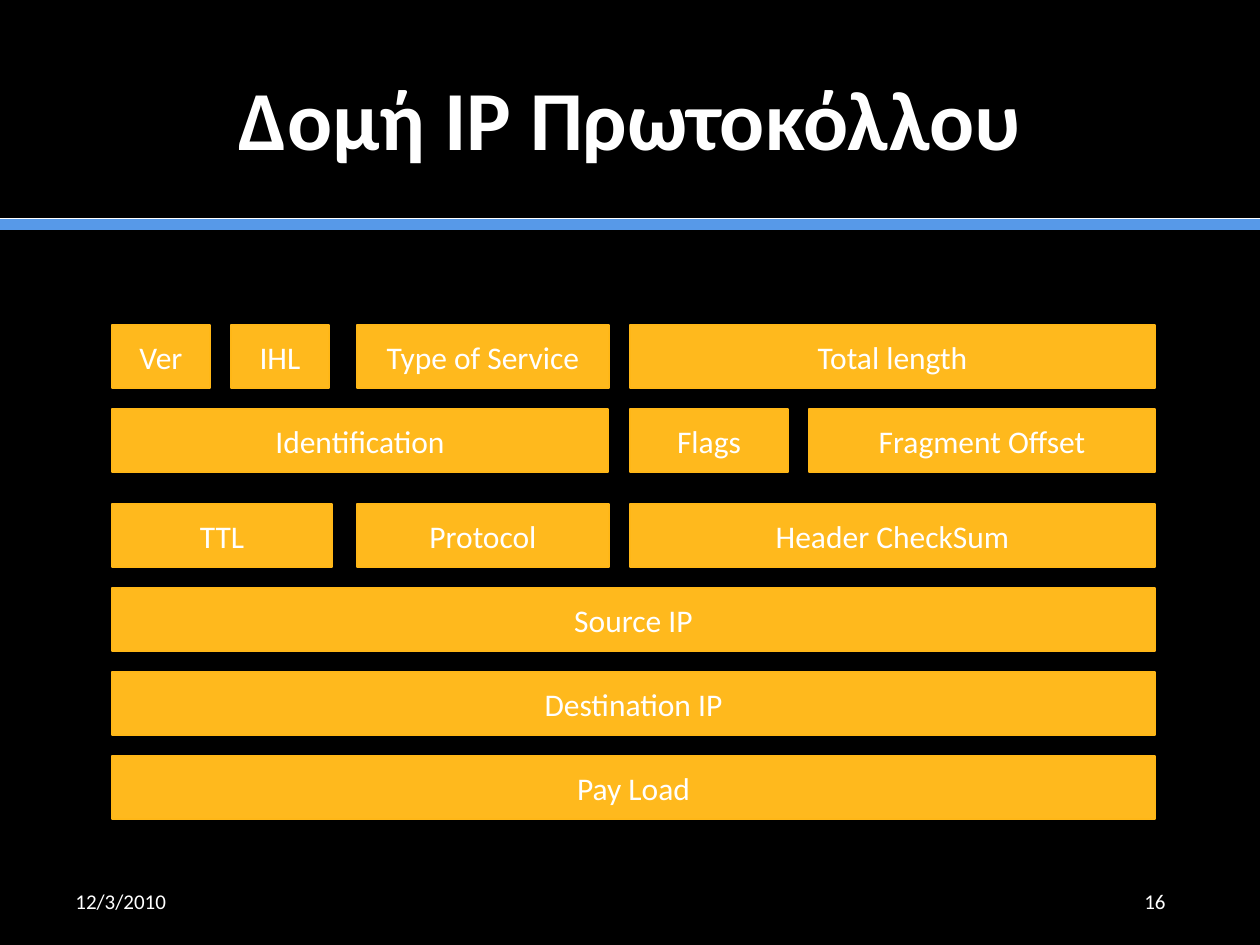
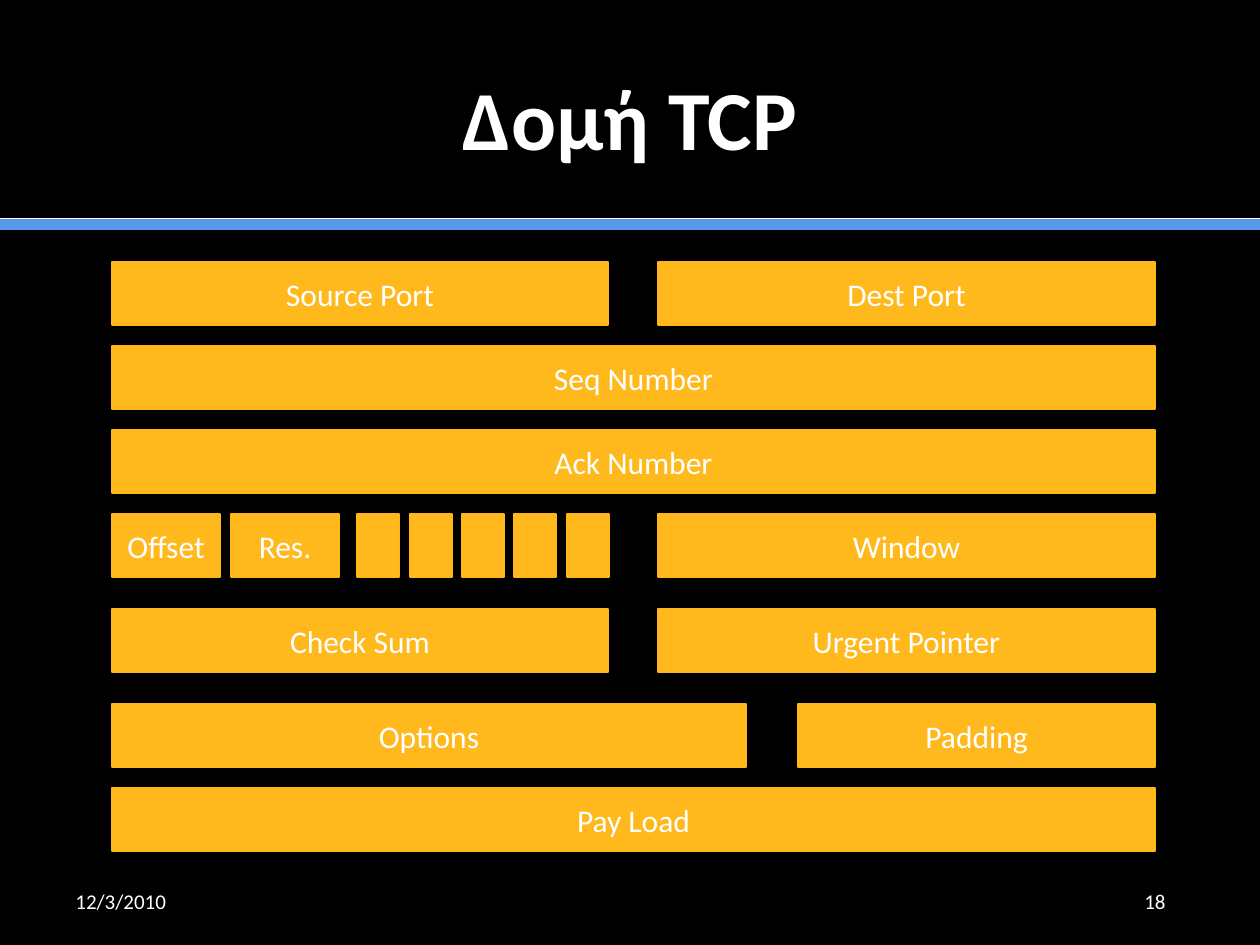
from lxml.etree import SubElement
from pptx import Presentation
from pptx.dml.color import RGBColor
from pptx.enum.shapes import MSO_CONNECTOR, MSO_SHAPE
from pptx.enum.text import MSO_ANCHOR, PP_ALIGN
from pptx.oxml.ns import qn
from pptx.util import Emu, Pt

PX_PER_INCH = 126
SLIDE_W, SLIDE_H = 1260, 945
BLACK, WHITE, BLUE = "000000", "FFFFFF", "5799E8"
AMBER, AMBER_EDGE = "FFB91D", "FFB717"

TITLE_FONT = {"name": "Calibri", "size": Pt(48), "bold": True}
FIELD_FONT = {"name": "Calibri", "size": Pt(18), "bold": False}
FOOTER_FONT = {"name": "Calibri", "size": Pt(12), "bold": False}

TITLE_BOX = (63, 38, 1134, 157)
DATE_BOX = (63, 876, 294, 50)
NUMBER_BOX = (1113, 876, 84, 50)
RULES = [(224, BLUE, 7), (218, WHITE, 0.5)]

HEADER_LEFT, HEADER_W, ROW_H = 112, 1043, 63
ROW_STEP, WIDE_STEP = 84, 95
FULL = (0, HEADER_W)
LEFT_HALF, RIGHT_HALF = (0, 496), (546, 497)
SECOND_QUARTER, IP_RIGHT = (245, 252), (518, 525)
FLAG_BITS, FLAG_W = 5, 42
FLAG_STEP = (SECOND_QUARTER[1] - FLAG_W) / (FLAG_BITS - 1)

IP_ROWS = [
    (ROW_STEP, [("Ver", 0, 98), ("IHL", 119, 98),
                ("Type of Service", *SECOND_QUARTER), ("Total length", *IP_RIGHT)]),
    (WIDE_STEP, [("Identification", *LEFT_HALF), ("Flags", 518, 158),
                 ("Fragment Offset", 697, 346)]),
    (ROW_STEP, [("TTL", 0, 220), ("Protocol", *SECOND_QUARTER),
                ("Header CheckSum", *IP_RIGHT)]),
    (ROW_STEP, [("Source IP", *FULL)]),
    (ROW_STEP, [("Destination IP", *FULL)]),
    (ROW_STEP, [("Pay Load", *FULL)]),
]
FLAG_FIELDS = [("", round(SECOND_QUARTER[0] + bit * FLAG_STEP), FLAG_W)
               for bit in range(FLAG_BITS)]
TCP_ROWS = [
    (ROW_STEP, [("Source Port", *LEFT_HALF), ("Dest Port", *RIGHT_HALF)]),
    (ROW_STEP, [("Seq Number", *FULL)]),
    (ROW_STEP, [("Ack Number", *FULL)]),
    (WIDE_STEP, [("Offset", 0, 108), ("Res.", 119, 108), *FLAG_FIELDS,
                 ("Window", *RIGHT_HALF)]),
    (WIDE_STEP, [("Check Sum", *LEFT_HALF), ("Urgent Pointer", *RIGHT_HALF)]),
    (ROW_STEP, [("Options", 0, 634), ("Padding", 686, 357)]),
    (ROW_STEP, [("Pay Load", *FULL)]),
]


def px(length):
    """Turn pixels into EMU."""
    return Emu(round(length * 914400 / PX_PER_INCH))


def rgb(hex_colour):
    """Turn a hex string into a colour."""
    return RGBColor.from_string(hex_colour)


def write(frame, text, font, align=PP_ALIGN.CENTER):
    """Fill a text frame with one white, vertically centred line."""
    frame.word_wrap = True
    frame.vertical_anchor = MSO_ANCHOR.MIDDLE
    line = frame.paragraphs[0]
    line.alignment = align
    run = line.add_run()
    run.text = text
    for key, value in font.items():
        setattr(run.font, key, value)
    run.font.color.rgb = rgb(WHITE)


def add_title(slide, text, box):
    """Place and fill the title placeholder."""
    title = slide.shapes.title
    for key, length in zip(("left", "top", "width", "height"), box):
        setattr(title, key, px(length))
    write(title.text_frame, text, TITLE_FONT)


def add_rules(slide):
    """Draw the double rule below the title."""
    for y, colour, weight in RULES:
        rule = slide.shapes.add_connector(
            MSO_CONNECTOR.STRAIGHT, px(0), px(y), px(SLIDE_W), px(y))
        rule.line.color.rgb = rgb(colour)
        rule.line.width = Pt(weight)
        SubElement(rule.element.spPr, qn("a:effectLst"))


def add_footer(slide, number):
    """Write the date and the slide number."""
    for text, box, align in [("12/3/2010", DATE_BOX, PP_ALIGN.LEFT),
                             (number, NUMBER_BOX, PP_ALIGN.CENTER)]:
        entry = slide.shapes.add_textbox(*map(px, box))
        write(entry.text_frame, text, FOOTER_FONT, align)


def add_field(slide, label, box):
    """Draw one amber field of a packet header."""
    field = slide.shapes.add_shape(MSO_SHAPE.RECTANGLE, *map(px, box))
    field.shadow.inherit = False
    field.fill.solid()
    field.fill.fore_color.rgb = rgb(AMBER)
    field.line.color.rgb = rgb(AMBER_EDGE)
    field.line.width = Pt(1.5)
    if label:
        write(field.text_frame, label, FIELD_FONT)


def add_header_rows(slide, rows, left, top):
    """Stack the rows of fields downwards from the given corner."""
    for step, fields in rows:
        for label, offset, width in fields:
            add_field(slide, label, (left + offset, top, width, ROW_H))
        top += step


def add_packet_slide(deck, title, number, rows, top):
    """Build a slide that shows the layout of one packet."""
    slide = deck.slides.add_slide(deck.slide_layouts.get_by_name("Title Only"))
    add_rules(slide)
    add_title(slide, title, TITLE_BOX)
    add_footer(slide, number)
    add_header_rows(slide, rows, HEADER_LEFT, top)


def main():
    """Build and save the deck."""
    deck = Presentation()
    deck.slide_width, deck.slide_height = px(SLIDE_W), px(SLIDE_H)
    backdrop = deck.slide_master.background.fill
    backdrop.solid()
    backdrop.fore_color.rgb = rgb(BLACK)
    add_packet_slide(deck, "Δομή IP Πρωτοκόλλου", "16", IP_ROWS, 325)
    add_packet_slide(deck, "Δομή TCP", "18", TCP_ROWS, 262)
    deck.save("out.pptx")


if __name__ == "__main__":
    main()
